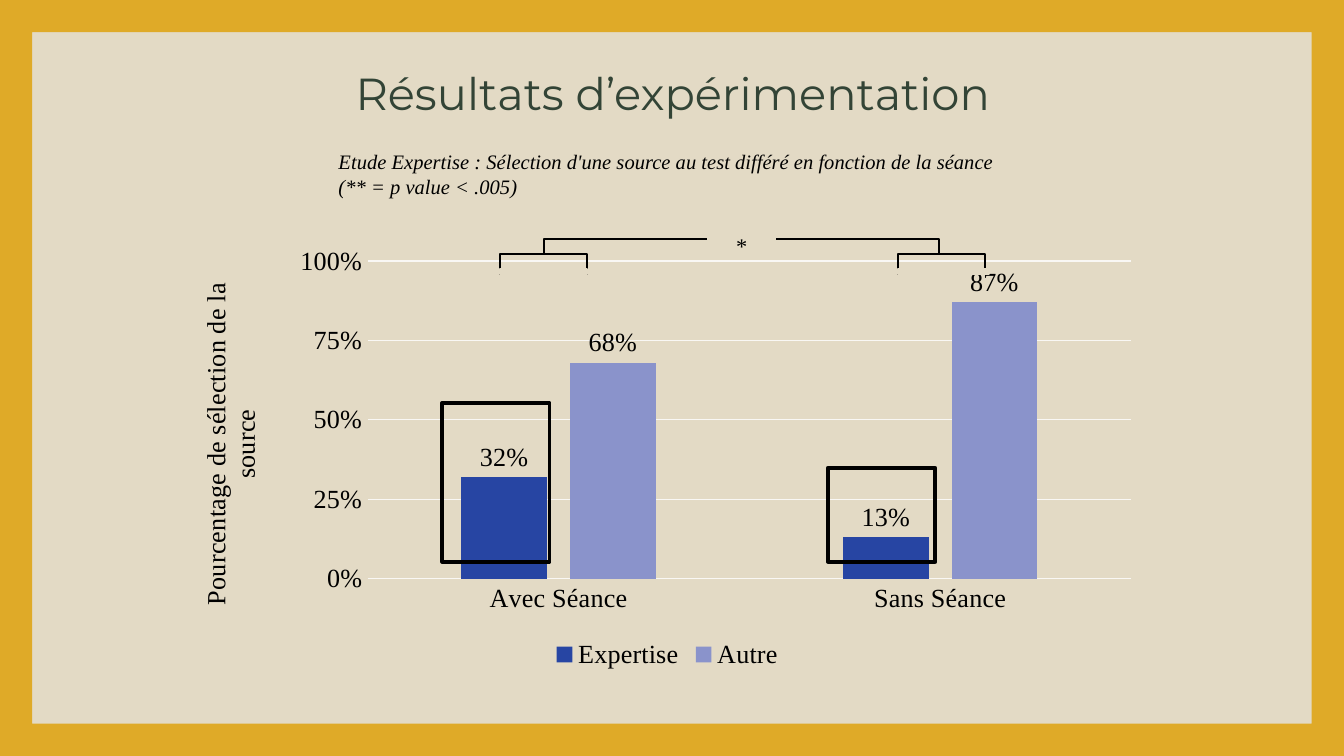
"""Build a results slide: a clustered column chart with comparison brackets."""
from dataclasses import dataclass
from typing import Optional

from lxml import etree
from pptx import Presentation
from pptx import util as u
from pptx.chart.data import CategoryChartData
from pptx.dml.color import RGBColor
from pptx.enum import chart as ch, shapes, text
from pptx.oxml import parse_xml
from pptx.oxml.ns import nsdecls, qn


@dataclass(frozen=True)
class Theme:
    paper: str = "E3DAC5"
    frame: str = "DFAA28"
    heading: str = "334436"
    ink: str = "000000"
    grid: str = "F9F7F4"
    series: tuple = ("2745A3", "8A93CB")
    head_font: str = "Montserrat"
    body_font: str = "Times New Roman"
    head_size: float = 24
    note_size: float = 11
    star_size: float = 12
    chart_size: float = 14
    thin: float = 1
    thick: float = 2
    hairline: float = 0.75


@dataclass(frozen=True)
class Box:
    """Place and size in percent of the slide."""
    x: float
    y: float
    w: float
    h: float

    def emu(self) -> tuple:
        return (int(W * self.x / 100), int(H * self.y / 100),
                int(W * self.w / 100), int(H * self.h / 100))


@dataclass(frozen=True)
class Bracket:
    outline: Box
    mask: Box


T = Theme()
W, H = u.Inches(10), u.Inches(5.625)
FRAME_SHARE = 0.0427
BRACKETS = (
    Bracket(Box(40.5, 31.64, 29.4, 2.13), Box(40.5, 33.6, 29.4, 0.53)),
    Bracket(Box(66.8, 33.6, 6.5, 2.67), Box(66.8, 35.56, 6.8, 0.71)),
    Bracket(Box(37.2, 33.6, 6.5, 2.67), Box(37.2, 35.56, 6.5, 0.71)),
)
HIGHLIGHTS = (Box(32.9, 53.33, 8, 20.98), Box(61.6, 61.87, 8, 12.44))
CATEGORIES = ("Avec Séance", "Sans Séance")
SERIES = {"Expertise": (0.32, 0.13), "Autre": (0.68, 0.87)}


def rgb(color: str) -> RGBColor:
    return RGBColor.from_string(color)


def style_font(font, size: float, color: str = T.ink, name: str = T.body_font) -> None:
    font.size, font.name, font.bold = u.Pt(size), name, False
    font.color.rgb = rgb(color)


def add_rect(s, box: Box, fill: Optional[str] = None, line: str = T.ink,
             width: float = T.thin, kind=shapes.MSO_SHAPE.RECTANGLE):
    sp = s.shapes.add_shape(kind, *box.emu())
    sp.shadow.inherit = False
    if fill:
        sp.fill.solid()
        sp.fill.fore_color.rgb = rgb(fill)
    else:
        sp.fill.background()
    sp.line.color.rgb = rgb(line)
    sp.line.width = u.Pt(width)
    return sp


def add_text(s, box: Box, lines: tuple, size: float, color: str, font: str,
             align=text.PP_ALIGN.LEFT, italic: bool = False) -> None:
    tf = s.shapes.add_textbox(*box.emu()).text_frame
    tf.word_wrap = True
    for i, line in enumerate(lines):
        p = tf.add_paragraph() if i else tf.paragraphs[0]
        p.alignment = align
        r = p.add_run()
        r.text = line
        style_font(r.font, size, color, font)
        r.font.italic = italic


def set_layout(parent, before: str, **shares: float) -> None:
    """Give a chart part a fixed place in shares of the chart."""
    for old in parent.findall(qn("c:layout")):
        parent.remove(old)
    layout = parse_xml(f"<c:layout {nsdecls('c')}><c:manualLayout/></c:layout>")
    manual = layout[0]
    if "w" in shares:
        etree.SubElement(manual, qn("c:layoutTarget")).set("val", "inner")
    for key in "xy":
        etree.SubElement(manual, qn(f"c:{key}Mode")).set("val", "edge")
    for key, share in shares.items():
        etree.SubElement(manual, qn(f"c:{key}")).set("val", str(share))
    parent.find(qn(before)).addprevious(layout)


def style_axes(chart) -> None:
    cat, val = chart.category_axis, chart.value_axis
    for axis in (cat, val):
        axis.major_tick_mark = axis.minor_tick_mark = ch.XL_TICK_MARK.NONE
        style_font(axis.tick_labels.font, T.chart_size)
    val.minimum_scale, val.maximum_scale, val.major_unit = 0, 1, 0.25
    val.tick_labels.number_format = "0%"
    val.tick_labels.number_format_is_linked = False
    val.format.line.fill.background()
    for line in (cat.format.line, val.major_gridlines.format.line):
        line.color.rgb = rgb(T.grid)
        line.width = u.Pt(T.hairline)
    title = val.axis_title
    r = title.text_frame.paragraphs[0].add_run()
    r.text = "Pourcentage de sélection de la source"
    style_font(r.font, T.chart_size)
    body = title.text_frame._txBody.find(qn("a:bodyPr"))
    body.set("rot", "-5400000")
    body.set("vert", "horz")
    set_layout(title._element, "c:overlay", x=0.01, y=0.09)


def add_column_chart(s, box: Box) -> None:
    data = CategoryChartData(number_format="0%")
    data.categories = CATEGORIES
    for name, values in SERIES.items():
        data.add_series(name, values)
    chart = s.shapes.add_chart(ch.XL_CHART_TYPE.COLUMN_CLUSTERED, *box.emu(), data).chart
    style_font(chart.font, T.chart_size)
    chart.has_title = False
    chart.has_legend = True
    chart.legend.position = ch.XL_LEGEND_POSITION.BOTTOM
    chart.legend.include_in_layout = False
    style_font(chart.legend.font, T.chart_size)
    style_axes(chart)
    plot = chart.plots[0]
    plot.gap_width, plot.overlap, plot.vary_by_categories = 219, -27, False
    for series, color in zip(plot.series, T.series):
        series.format.fill.solid()
        series.format.fill.fore_color.rgb = rgb(color)
        labels = series.data_labels
        labels.show_value = True
        labels.position = ch.XL_LABEL_POSITION.OUTSIDE_END
        labels.number_format, labels.number_format_is_linked = "0%", False
        style_font(labels.font, T.chart_size)
    area = chart._chartSpace.chart.plotArea
    set_layout(area, "c:barChart", x=0.19, y=0.05, w=0.79, h=0.73)


def add_star(s, box: Box) -> None:
    tf = add_rect(s, box, T.paper, T.paper).text_frame
    tf.vertical_anchor = text.MSO_ANCHOR.MIDDLE
    p = tf.paragraphs[0]
    p.alignment, p.line_spacing, p.space_after = text.PP_ALIGN.CENTER, 1.5, u.Pt(8)
    r = p.add_run()
    r.text = "*"
    style_font(r.font, T.star_size)


def main() -> None:
    prs = Presentation()
    prs.slide_width, prs.slide_height = W, H
    s = prs.slides.add_slide(prs.slide_layouts[6])
    s.background.fill.solid()
    s.background.fill.fore_color.rgb = rgb(T.paper)
    frame = add_rect(s, Box(0, 0, 100, 100), T.frame, kind=shapes.MSO_SHAPE.FRAME)
    frame.adjustments[0] = FRAME_SHARE
    frame.line.fill.background()
    add_text(s, Box(19.1, 7.82, 61.9, 8.89), ("Résultats d’expérimentation",),
             T.head_size, T.heading, T.head_font, text.PP_ALIGN.CENTER)
    add_text(s, Box(24.2, 18.84, 61.9, 8.36),
             ("Etude Expertise : Sélection d'une source au test différé en fonction de la séance",
              "(** = p value < .005)"),
             T.note_size, T.ink, T.body_font, italic=True)
    add_column_chart(s, Box(13.7, 31.64, 71.9, 57.6))
    for bracket in BRACKETS:
        add_rect(s, bracket.outline)
        add_rect(s, bracket.mask, T.paper, T.paper)
    add_star(s, Box(52.7, 29.69, 5, 3.73))
    for box in HIGHLIGHTS:
        add_rect(s, box, width=T.thick)
    prs.save("out.pptx")


if __name__ == "__main__":
    main()
